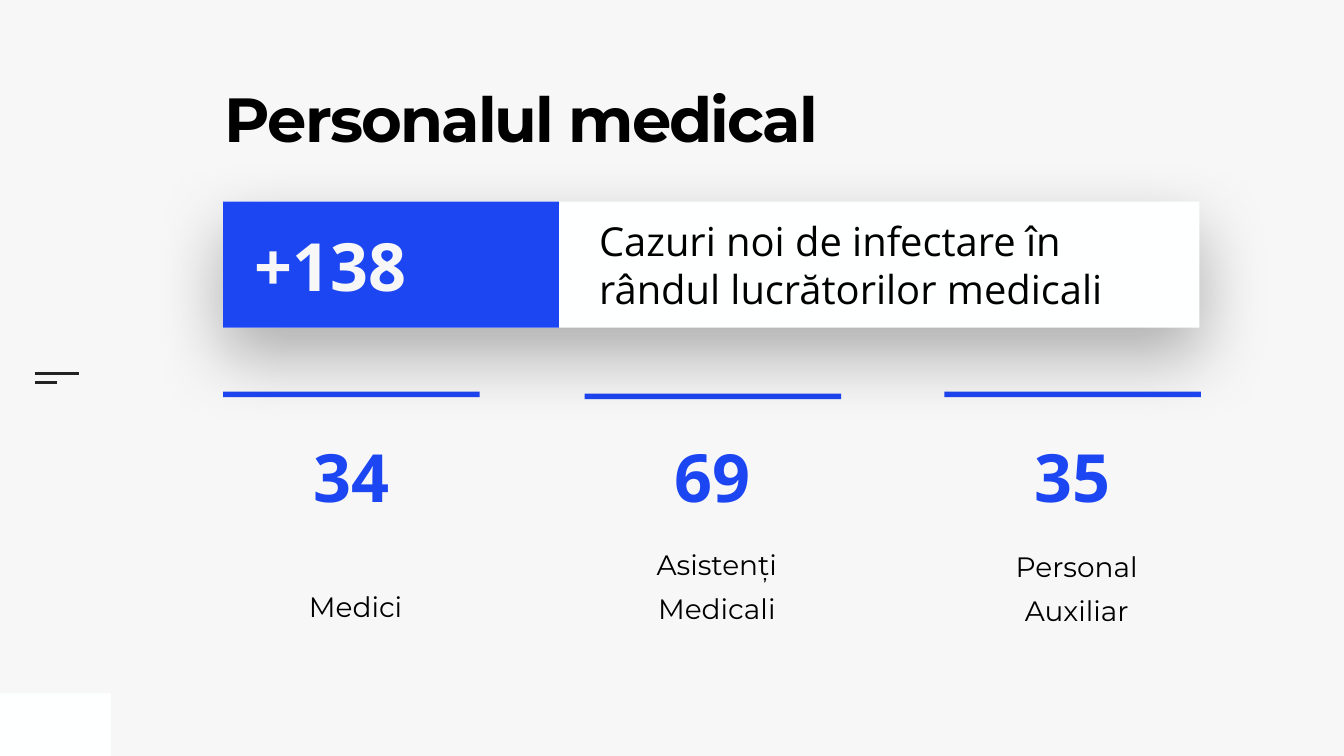
import pptx
import pptx.util
import pptx.dml.color
import pptx.enum.shapes
import pptx.enum.text
import pptx.oxml
import pptx.oxml.ns

PX = 9144
BLUE, PALE, WHITE, BLACK, DARK = "1D46F3", "F7F7F7", "FEFFFF", "000000", "222222"
ALIGN = pptx.enum.text.PP_ALIGN
ANCHOR = pptx.enum.text.MSO_ANCHOR


def px(*values):
    return [v * PX for v in values]


def color(value):
    return pptx.dml.color.RGBColor.from_string(value)


def add_effects(sp, effects=""):
    ns = pptx.oxml.ns.nsdecls("a")
    xml = f"<a:effectLst {ns}>{effects}</a:effectLst>"
    sp._element.spPr.append(pptx.oxml.parse_xml(xml))


def add_rect(s, box, fill):
    sp = s.shapes.add_shape(pptx.enum.shapes.MSO_SHAPE.RECTANGLE, *px(*box))
    sp.fill.solid()
    sp.fill.fore_color.rgb = color(fill)
    sp.line.fill.background()
    sp.shadow.inherit = False
    return sp


def add_line(s, x1, x2, y):
    line = s.shapes.add_connector(
        pptx.enum.shapes.MSO_CONNECTOR.STRAIGHT, *px(x1, y, x2, y))
    line.line.color.rgb = color(DARK)
    line.line.width = pptx.util.Pt(3)
    add_effects(line)


def write(sp, text, size, font="Open Sans", fill=BLACK, bold=False,
          align=ALIGN.LEFT, anchor=ANCHOR.MIDDLE, insets=(10, 10, 10, 10),
          spacing=None, before=0, tracking=0):
    tf = sp.text_frame
    tf.word_wrap = True
    tf.vertical_anchor = anchor
    tf.margin_left, tf.margin_top, tf.margin_right, tf.margin_bottom = px(*insets)
    p = tf.paragraphs[0]
    p.alignment = align
    p.line_spacing = spacing
    p.space_before = pptx.util.Pt(before)
    r = p.add_run()
    r.text = text
    r.font.size = pptx.util.Pt(size)
    r.font.name = font
    r.font.bold = bold
    r.font.color.rgb = color(fill)
    if tracking:
        r._r.get_or_add_rPr().set("spc", str(tracking))


def add_text(s, box, text, size, **fmt):
    write(s.shapes.add_textbox(*px(*box)), text, size, **fmt)


def add_card(s, x, y, label):
    sp = add_rect(s, (x, y, 509, 546), PALE)
    write(sp, label, 40, font="Montserrat", align=ALIGN.CENTER,
          anchor=ANCHOR.BOTTOM, insets=(55, 71, 39, 87), spacing=1.3, before=20)


def add_banner(s):
    sp = add_rect(s, (443, 400, 1937, 250), WHITE)
    sp._element.spPr.remove(sp._element.spPr.find(pptx.oxml.ns.qn("a:effectLst")))
    blur, dist = pptx.util.Pt(100), pptx.util.Pt(40)
    add_effects(sp, f'<a:outerShdw blurRad="{blur}" dist="{dist}" dir="5400000" '
                    'rotWithShape="0"><a:srgbClr val="000000">'
                    '<a:alpha val="30000"/></a:srgbClr></a:outerShdw>')
    add_text(s, (1179, 419, 1176, 212),
             "Cazuri noi de infectare în rândul lucrătorilor medicali", 57)
    add_rect(s, (443, 400, 666, 250), BLUE)
    add_text(s, (496, 435, 603, 180), "+138", 95, fill=PALE, bold=True)


def main():
    prs = pptx.Presentation()
    prs.slide_width, prs.slide_height = px(2667, 1500)
    s = prs.slides.add_slide(prs.slide_layouts[6])
    s.background.fill.solid()
    s.background.fill.fore_color.rgb = color(PALE)

    add_rect(s, (0, 1376, 220, 124), WHITE)
    add_line(s, 69, 157, 741)
    add_line(s, 69, 113, 759)

    cards = [
        (443, 777, 777, "34", "Medici"),
        (1160, 781, 781, "69", "Asistenți Medicali"),
        (1874, 785, 777, "35", "Personal Auxiliar"),
    ]
    for x, y, bar_y, number, label in cards:
        add_card(s, x, y, label)
        add_rect(s, (x, bar_y, 509, 11), BLUE)

    add_text(s, (446, 187, 1301, 273), "Personalul medical", 89,
             font="Montserrat", bold=True, anchor=ANCHOR.TOP,
             insets=(0, 0, 0, 0), spacing=0.8, tracking=-270)
    add_banner(s)

    for x, y, bar_y, number, label in cards:
        add_text(s, (x, 854, 509, 180), number, 95, fill=BLUE, bold=True,
                 align=ALIGN.CENTER)
    prs.save("out.pptx")


if __name__ == "__main__":
    main()
